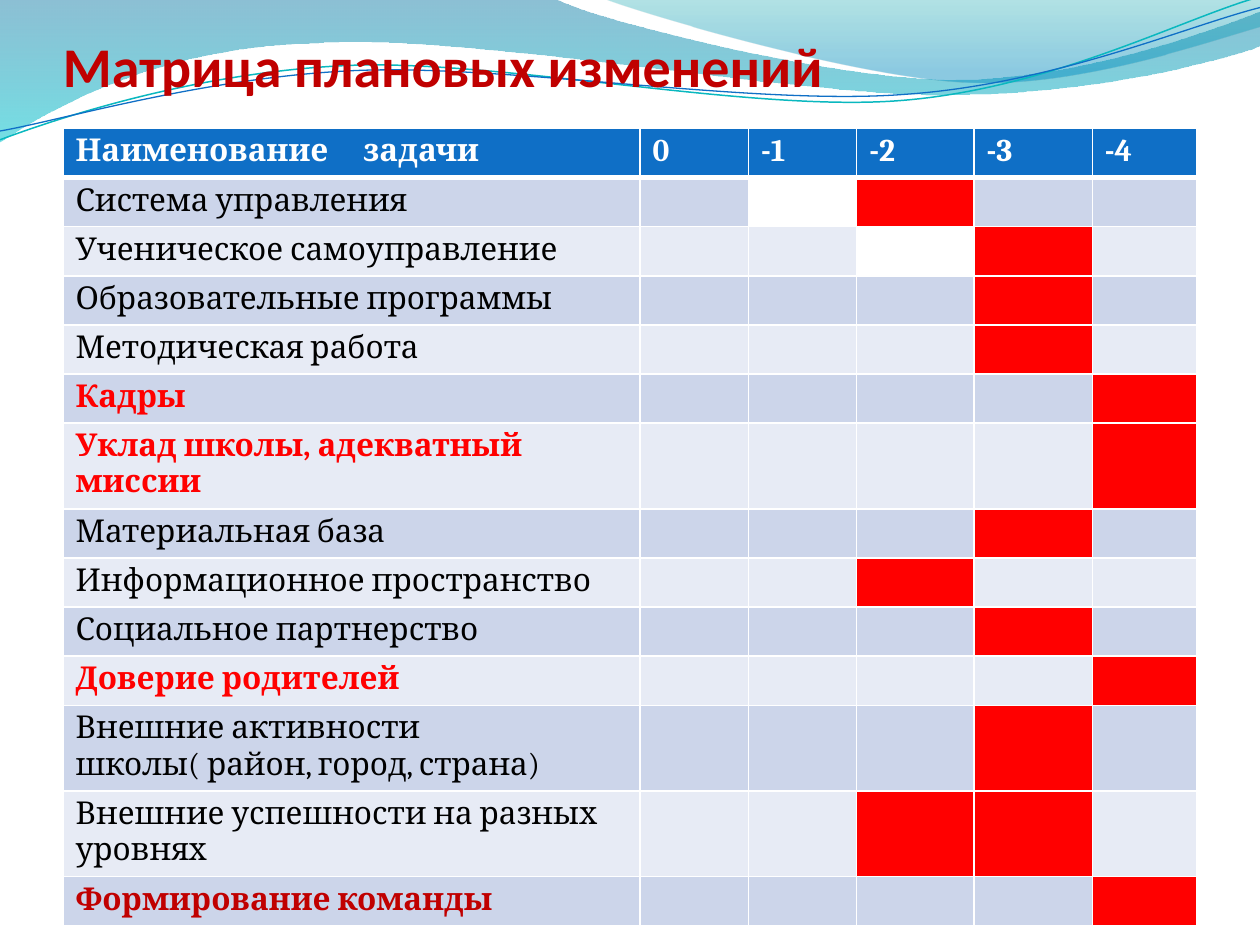
from lxml.etree import SubElement
from pptx import Presentation
from pptx.dml.color import RGBColor
from pptx.enum.text import MSO_ANCHOR
from pptx.oxml.ns import qn
from pptx.util import Inches, Pt

WHITE = RGBColor(0xFF, 0xFF, 0xFF)
BLACK = RGBColor(0x00, 0x00, 0x00)
RED = RGBColor(0xFF, 0x00, 0x00)
DARK_RED = RGBColor(0xC0, 0x00, 0x00)
BLUE = RGBColor(0x0F, 0x6F, 0xC6)
TEAL = RGBColor(0x0A, 0xB8, 0xBF)
BANDS = (RGBColor(0xCC, 0xD5, 0xEA), RGBColor(0xE7, 0xEB, 0xF5))

# Each wave: a start point, then line ends (x, y) or cubic curves (6 numbers).
# Gradient stops: colour and opacity in percent; last, the end stop's position.
FILLED_WAVES = [
    ([(0, 0), (4.4, -0.01), (4.76, 0.17, 6.64, 0.63, 7.58, 0.63),
      (8.53, 0.63, 9.58, 0.26, 10, 0.09), (10.01, 0.36),
      (9.83, 0.44, 8.7, 0.76, 7.46, 0.75), (6.22, 0.75, 3.82, 0.28, 2.57, 0.34),
      (1.29, 0.36, 0.46, 0.83, -0.01, 1.13), (0, 0)],
     [(RGBColor(0x00, 0x74, 0xA1), 45), (RGBColor(0x00, 0xC6, 0xCF), 55)], 1),
    ([(4.79, -0.01), (5.09, 0.11, 6.82, 0.62, 7.69, 0.65),
      (8.56, 0.69, 9.61, 0.32, 10, 0.21), (10, 0), (4.79, -0.01)],
     [(RGBColor(0x00, 0xA1, 0xA9), 30), (RGBColor(0x00, 0x8B, 0xBF), 45)], 0.8),
]
LINE_WAVES = [
    ([(0, 1.11), (0.48, 0.93, 1.58, 0.57, 2.77, 0.52),
      (3.95, 0.47, 5.93, 0.89, 7.13, 0.8), (8.33, 0.71, 9.38, 0.15, 9.98, -0.02)],
     TEAL, 0.85),
    ([(0, 1.04), (0.47, 0.96, 1.64, 0.61, 2.83, 0.56),
      (4.03, 0.51, 5.97, 0.84, 7.17, 0.75), (8.36, 0.67, 9.41, 0.21, 10, 0.06)],
     BLUE, 0.75),
]

COLUMN_WIDTHS = (4.58, 0.86, 0.86, 0.93, 0.94, 0.83)
HEADER = ("Наименование\tзадачи", "0", "-1", "-2", "-3", "-4")
# Task, text colour (bold unless black), {column: marker fill}
TASKS = [
    ("Система управления", BLACK, {2: WHITE, 3: RED}),
    ("Ученическое самоуправление", BLACK, {3: WHITE, 4: RED}),
    ("Образовательные программы", BLACK, {4: RED}),
    ("Методическая работа", BLACK, {4: RED}),
    ("Кадры", RED, {5: RED}),
    ("Уклад школы, адекватный миссии", RED, {5: RED}),
    ("Материальная база", BLACK, {4: RED}),
    ("Информационное пространство", BLACK, {3: RED}),
    ("Социальное партнерство", BLACK, {4: RED}),
    ("Доверие родителей", RED, {5: RED}),
    ("Внешние активности школы( район, город, страна)", BLACK, {4: RED}),
    ("Внешние успешности на разных уровнях", BLACK, {3: RED, 4: RED}),
    ("Формирование команды", DARK_RED, {5: RED}),
]


def set_font(span, color, **values):
    for name, value in values.items():
        setattr(span.font, name, value)
    span.font.color.rgb = color


def add_wave(page, segments, close):
    """Build the outline from all its points, then bend the curved segments."""
    points = [(Inches(segment[i]), Inches(segment[i + 1]))
              for segment in segments for i in range(0, len(segment), 2)]
    builder = page.shapes.build_freeform(*points[0])
    builder.add_line_segments(points[1:], close=close)
    wave = builder.convert_to_shape()
    wave.shadow.inherit = False
    lines = wave._element.findall(".//" + qn("a:lnTo"))
    for segment in segments[1:]:
        count = len(segment) // 2
        group, lines = lines[:count], lines[count:]
        if count == 3:
            curve = SubElement(group[0].getparent(), qn("a:cubicBezTo"))
            group[0].addprevious(curve)
            for line in group:
                curve.append(line[0])
                line.getparent().remove(line)
    return wave


def add_waves(page):
    for segments, stops, end in FILLED_WAVES:
        wave = add_wave(page, segments, True)
        wave.line.fill.background()
        wave.fill.gradient()
        wave.fill.gradient_angle = 270
        for stop, position, (color, _) in zip(wave.fill.gradient_stops, (0, end), stops):
            stop.color.rgb = color
            stop.position = position
        for node, (_, opacity) in zip(wave.fill._xPr.iter(qn("a:srgbClr")), stops):
            SubElement(node, qn("a:alpha"), val=str(opacity * 1000))
    for segments, color, width in LINE_WAVES:
        wave = add_wave(page, segments, False)
        wave.fill.background()
        wave.line.color.rgb = color
        wave.line.width = Pt(width)


def add_title(page, left, top, width, height):
    box = page.shapes.add_textbox(left, top, width, height)
    frame = box.text_frame
    layout = {"word_wrap": True, "vertical_anchor": MSO_ANCHOR.BOTTOM, "margin_left": 0,
              "margin_right": 0, "margin_top": Inches(0.05), "margin_bottom": 0}
    for name, value in layout.items():
        setattr(frame, name, value)
    span = frame.paragraphs[0].add_run()
    span.text = "Матрица плановых изменений"
    set_font(span, DARK_RED, name="Calibri", size=Pt(32), bold=True)


def style_cell(cell, fill, top=1, bottom=1):
    """Set margins, white borders (widths in points) and the fill."""
    cell.margin_top = cell.margin_bottom = Inches(0.04)
    properties = cell._tc.get_or_add_tcPr()
    for side, width in zip("LRTB", (1, 1, top, bottom)):
        line = SubElement(properties, qn(f"a:ln{side}"), w=str(Pt(width)))
        SubElement(SubElement(line, qn("a:solidFill")), qn("a:srgbClr"), val=str(WHITE))
    cell.fill.solid()
    cell.fill.fore_color.rgb = fill


def write_cell(cell, text, color, bold):
    para = cell.text_frame.paragraphs[0]
    if not text:
        end = SubElement(para._p, qn("a:endParaRPr"), sz="1800")
        SubElement(end, qn("a:latin"), typeface="Cambria")
        return
    span = para.add_run()
    span.text = text
    set_font(span, color, name="Cambria", size=Pt(18), bold=bold)
    if "\t" in text:
        tabs = SubElement(para._p.get_or_add_pPr(), qn("a:tabLst"))
        SubElement(tabs, qn("a:tab"), pos=str(Inches(2.28)), algn="l")


def add_matrix(page, left, top, width, row_height):
    rows = len(TASKS) + 1
    table = page.shapes.add_table(rows, len(HEADER), left, top, width,
                                  row_height * rows).table
    for column, column_width in zip(table.columns, COLUMN_WIDTHS):
        column.width = Inches(column_width)
    for row in table.rows:
        row.height = row_height
    for column, text in enumerate(HEADER):
        cell = table.cell(0, column)
        style_cell(cell, BLUE, bottom=3)
        write_cell(cell, text, WHITE, True)
    for row, (task, color, marks) in enumerate(TASKS, 1):
        for column in range(len(HEADER)):
            cell = table.cell(row, column)
            style_cell(cell, marks.get(column, BANDS[(row - 1) % 2]),
                       top=3 if row == 1 else 1)
            write_cell(cell, "" if column else task, color, color != BLACK)


def main():
    deck = Presentation()
    deck.slide_width, deck.slide_height = Inches(10), Inches(7.5)
    page = deck.slides.add_slide(deck.slide_layouts[6])
    add_waves(page)
    add_title(page, Inches(0.5), Inches(0.47), Inches(9), Inches(0.31))
    add_matrix(page, Inches(0.5), Inches(1.02), Inches(9), Inches(0.39))
    deck.save("out.pptx")


if __name__ == "__main__":
    main()
